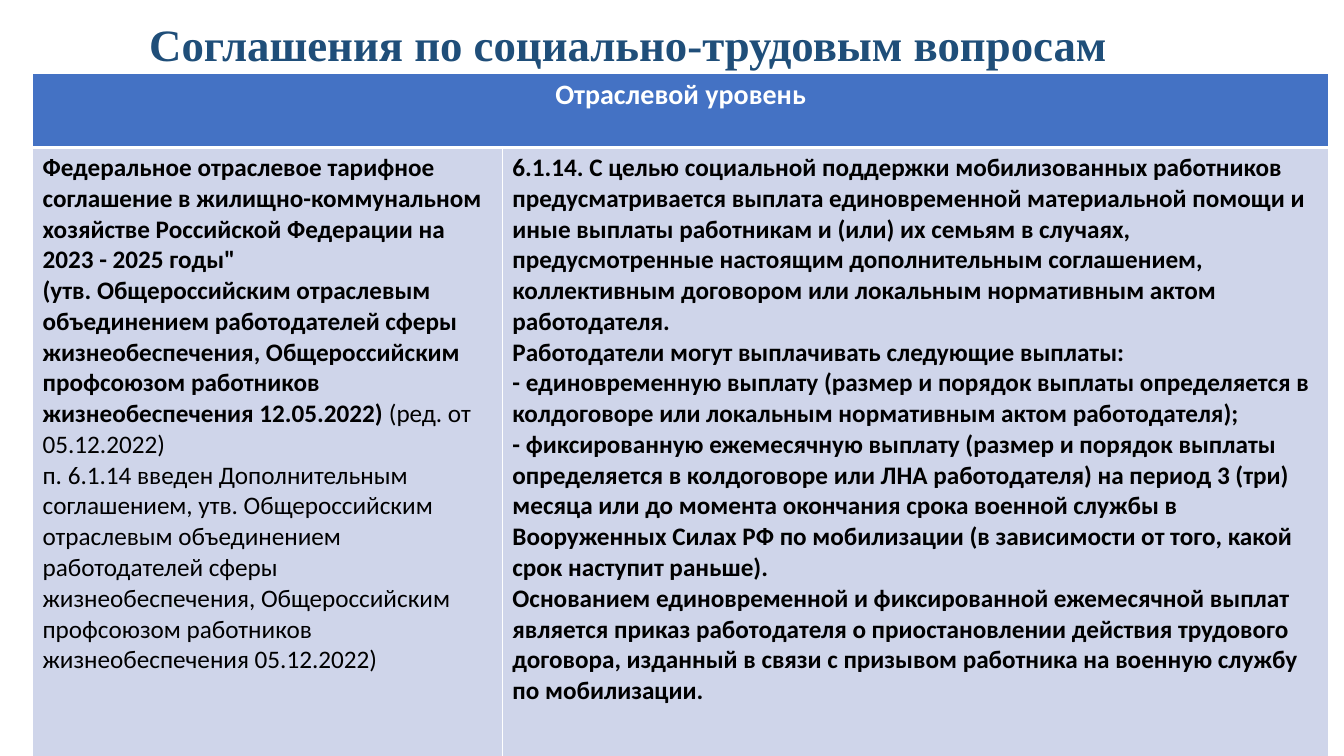
from dataclasses import dataclass

from lxml import etree
from pptx import Presentation
from pptx.dml.color import RGBColor
from pptx.enum.text import PP_ALIGN
from pptx.oxml.ns import qn
from pptx.util import Cm, Pt

LEFT = PP_ALIGN.LEFT
CENTER = PP_ALIGN.CENTER

TITLE = "Соглашения по социально-трудовым вопросам"
LEVEL = "Отраслевой уровень"
AGREEMENT = [
    [("Федеральное отраслевое тарифное соглашение в жилищно-коммунальном хозяйстве "
      "Российской Федерации на 2023 - 2025 годы\"", True)],
    [("(утв. Общероссийским отраслевым объединением работодателей сферы жизнеобеспечения, "
      "Общероссийским профсоюзом работников жизнеобеспечения 12.05.2022)", True),
     (" (ред. от 05.12.2022)", False)],
    [("п. 6.1.14 введен Дополнительным соглашением, утв. Общероссийским отраслевым "
      "объединением работодателей сферы жизнеобеспечения, Общероссийским профсоюзом "
      "работников жизнеобеспечения 05.12.2022)", False)],
]
PAYMENTS = [
    "6.1.14. С целью социальной поддержки мобилизованных работников предусматривается "
    "выплата единовременной материальной помощи и иные выплаты работникам и (или) их семьям "
    "в случаях, предусмотренные настоящим дополнительным соглашением, коллективным договором "
    "или локальным нормативным актом работодателя.",
    "Работодатели могут выплачивать следующие выплаты:",
    "- единовременную выплату (размер и порядок выплаты определяется в колдоговоре или "
    "локальным нормативным актом работодателя);",
    "- фиксированную ежемесячную выплату (размер и порядок выплаты определяется в колдоговоре "
    "или ЛНА работодателя) на период 3 (три) месяца или до момента окончания срока военной "
    "службы в Вооруженных Силах РФ по мобилизации (в зависимости от того, какой срок наступит "
    "раньше).",
    "Основанием единовременной и фиксированной ежемесячной выплат является приказ работодателя "
    "о приостановлении действия трудового договора, изданный в связи с призывом работника "
    "на военную службу по мобилизации.",
]


@dataclass(frozen=True)
class Theme:
    title_font: str = "Times New Roman"
    body_font: str = "Calibri"
    title_size: int = 32
    header_size: int = 20
    body_size: int = 18
    title_color: str = "1F4E79"
    header_fill: str = "4472C4"
    body_fill: str = "CFD5EA"
    white: str = "FFFFFF"
    black: str = "000000"


def write(frame, paragraphs, *, font, size, color, align=LEFT):
    for index, spans in enumerate(paragraphs):
        para = frame.add_paragraph() if index else frame.paragraphs[0]
        para.alignment = align
        for text, bold in spans:
            span = para.add_run()
            span.text = text
            span.font.name = font
            span.font.size = Pt(size)
            span.font.bold = bold
            span.font.color.rgb = RGBColor.from_string(color)


class SlideBuilder:
    def __init__(self, page, theme):
        self.page = page
        self.theme = theme

    def title(self, text, left, top, width, height):
        box = self.page.shapes.add_textbox(Cm(left), Cm(top), Cm(width), Cm(height))
        box.text_frame.word_wrap = True
        write(box.text_frame, [[(text, True)]], font=self.theme.title_font,
              size=self.theme.title_size, color=self.theme.title_color)

    def table(self, left, top, widths, heights):
        frame = self.page.shapes.add_table(len(heights), len(widths), Cm(left), Cm(top),
                                           Cm(sum(widths)), Cm(sum(heights)))
        grid = frame.table
        for column, width in zip(grid.columns, widths):
            column.width = Cm(width)
        for row, height in zip(grid.rows, heights):
            row.height = Cm(height)
        return grid

    def borders(self, cell, **widths):
        properties = cell._tc.get_or_add_tcPr()
        for side in ("L", "R", "T", "B"):
            line = etree.SubElement(properties, qn(f"a:ln{side}"), w=str(Pt(widths.get(side, 1))))
            fill = etree.SubElement(line, qn("a:solidFill"))
            etree.SubElement(fill, qn("a:srgbClr"), val=self.theme.white)

    def cell(self, cell, paragraphs, *, fill, **text_format):
        cell.fill.solid()
        cell.fill.fore_color.rgb = RGBColor.from_string(fill)
        write(cell.text_frame, paragraphs, font=self.theme.body_font, **text_format)


def main():
    deck = Presentation()
    deck.slide_width, deck.slide_height = Cm(33.87), Cm(19.05)
    theme = Theme()
    builder = SlideBuilder(deck.slides.add_slide(deck.slide_layouts[6]), theme)

    grid = builder.table(0.82, 1.84, widths=(11.84, 20.83), heights=(1.88, 15.57))
    header, agreement, payments = grid.cell(0, 0), grid.cell(1, 0), grid.cell(1, 1)
    header.merge(grid.cell(0, 1))
    for top_cell in (header, grid.cell(0, 1)):
        builder.borders(top_cell, B=3)
    for body_cell in (agreement, payments):
        builder.borders(body_cell, T=3)

    builder.cell(header, [[(LEVEL, True)]], fill=theme.header_fill,
                 size=theme.header_size, color=theme.white, align=CENTER)
    body_format = dict(fill=theme.body_fill, size=theme.body_size, color=theme.black)
    builder.cell(agreement, AGREEMENT, **body_format)
    builder.cell(payments, [[(text, True)] for text in PAYMENTS], **body_format)

    builder.title(TITLE, 3.51, 0.3, 28.35, 1.63)
    deck.save("out.pptx")


if __name__ == "__main__":
    main()
